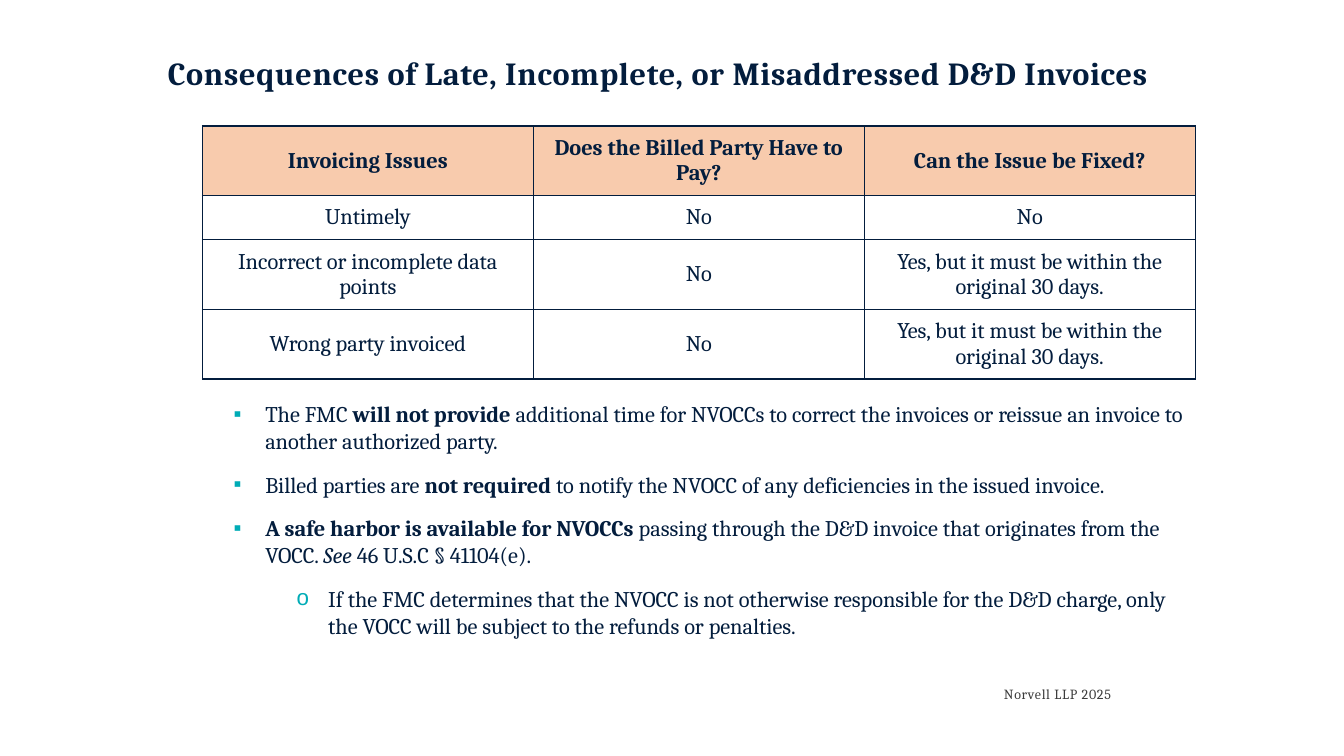
from dataclasses import dataclass

from lxml import etree
from pptx import Presentation
from pptx.dml.color import RGBColor
from pptx.enum.text import MSO_ANCHOR, MSO_AUTO_SIZE, PP_ALIGN
from pptx.oxml.ns import qn
from pptx.util import Pt

LEFT, CENTER = PP_ALIGN.LEFT, PP_ALIGN.CENTER
TOP, MIDDLE = MSO_ANCHOR.TOP, MSO_ANCHOR.MIDDLE
NO_FIT = MSO_AUTO_SIZE.NONE

FONT = "Cambria"
BULLET_FONT = "Arial"
COLORS = {"navy": "031D3D", "gray": "3C3C3C", "peach": "F8CBAD", "teal": "00ACB6"}
TITLE_ONLY = 5
INDENT = 22.5

FRAME_FORMAT = {
    "word_wrap": True, "auto_size": NO_FIT,
    "margin_left": 0, "margin_top": 0, "margin_right": 0, "margin_bottom": 0,
}


@dataclass
class Span:
    text: str
    bold: bool = False
    italic: bool = False


@dataclass
class Bullet:
    spans: list[Span]
    mark: str = "▪"
    level: int = 0
    indent: float = INDENT


TITLE = "Consequences of Late, Incomplete, or Misaddressed D&D Invoices"
FOOTER = "Norvell LLP 2025"
FIXABLE = "Yes, but it must be within the original 30 days."
ISSUE_ROWS = [
    ["Invoicing Issues", "Does the Billed Party Have to Pay?", "Can the Issue be Fixed?"],
    ["Untimely", "No", "No"],
    ["Incorrect or incomplete data points", "No", FIXABLE],
    ["Wrong party invoiced", "No", FIXABLE],
]
COLUMN_WIDTH = 236.4
ROW_HEIGHTS = [49.7, 31.6, 49.7, 49.7]

BULLETS = [
    Bullet([
        Span("The FMC "),
        Span("will not provide", bold=True),
        Span(" additional time for NVOCCs to correct the invoices or reissue "
             "an invoice to another authorized party."),
    ]),
    Bullet([
        Span("Billed parties are "),
        Span("not required", bold=True),
        Span(" to notify the NVOCC of any deficiencies in the issued invoice."),
    ]),
    Bullet([
        Span("A safe harbor is available for NVOCCs", bold=True),
        Span(" passing through the D&D invoice that originates from the VOCC. "),
        Span("See", italic=True),
        Span(" 46 U.S.C § 41104(e)."),
    ]),
    Bullet([
        Span("If the FMC determines that the NVOCC is not otherwise responsible for "
             "the D&D charge, only the VOCC will be subject to the refunds or penalties."),
    ], mark="o", level=2, indent=3 * INDENT),
]


def apply(target, values: dict) -> None:
    for name, value in values.items():
        setattr(target, name, value)


def add_span(para, span: Span, size: float = 16, color: str = "navy",
             spacing: float = 0) -> None:
    run = para.add_run()
    run.text = span.text
    apply(run.font, {"name": FONT, "size": Pt(size),
                     "bold": span.bold, "italic": span.italic})
    run.font.color.rgb = RGBColor.from_string(COLORS[color])
    if spacing:
        run.font._element.set("spc", str(round(spacing * 100)))


def place(shape, left: float, top: float, width: float, height: float) -> None:
    apply(shape, {"left": Pt(left), "top": Pt(top),
                  "width": Pt(width), "height": Pt(height)})


def add_box(page, left: float, top: float, width: float, height: float):
    box = page.shapes.add_textbox(Pt(left), Pt(top), Pt(width), Pt(height))
    apply(box.text_frame, FRAME_FORMAT | {"vertical_anchor": TOP})
    return box


def add_color(parent, color: str) -> None:
    etree.SubElement(parent, qn("a:srgbClr"), val=COLORS[color])


def set_borders(cell, color: str, width: float) -> None:
    properties = cell._tc.get_or_add_tcPr()
    for position, side in enumerate(("a:lnL", "a:lnR", "a:lnT", "a:lnB")):
        line = etree.Element(qn(side), w=str(Pt(width)))
        add_color(etree.SubElement(line, qn("a:solidFill")), color)
        properties.insert(position, line)


def add_bullet(para, bullet: Bullet, first: bool) -> None:
    properties = para._p.get_or_add_pPr()
    properties.set("marL", str(Pt(bullet.indent)))
    properties.set("indent", str(Pt(-INDENT)))
    add_color(etree.SubElement(properties, qn("a:buClr")), "teal")
    etree.SubElement(properties, qn("a:buFont"), typeface=BULLET_FONT)
    etree.SubElement(properties, qn("a:buChar"), char=bullet.mark)
    apply(para, {"level": bullet.level, "alignment": LEFT,
                 "space_before": Pt(0 if first else 6), "space_after": Pt(6)})
    for span in bullet.spans:
        add_span(para, span)


def add_title(page) -> None:
    title = page.shapes.title
    place(title, 120, 23, 813.6, 61.2)
    apply(title.text_frame, FRAME_FORMAT | {"vertical_anchor": MIDDLE})
    para = title.text_frame.paragraphs[0]
    apply(para, {"alignment": LEFT, "line_spacing": 0.9})
    add_span(para, Span(TITLE, bold=True), size=23, spacing=0.5)


def add_issue_table(page) -> None:
    columns = len(ISSUE_ROWS[0])
    table = page.shapes.add_table(
        len(ISSUE_ROWS), columns, Pt(144.6), Pt(90),
        Pt(columns * COLUMN_WIDTH), Pt(sum(ROW_HEIGHTS))).table
    table.horz_banding = False
    for column in table.columns:
        column.width = Pt(COLUMN_WIDTH)
    for row_index, (labels, height) in enumerate(zip(ISSUE_ROWS, ROW_HEIGHTS)):
        header = row_index == 0
        table.rows[row_index].height = Pt(height)
        for cell, label in zip(table.rows[row_index].cells, labels):
            cell.vertical_anchor = MIDDLE
            if header:
                cell.fill.solid()
                cell.fill.fore_color.rgb = RGBColor.from_string(COLORS["peach"])
            else:
                cell.fill.background()
            set_borders(cell, "navy", 1)
            para = cell.text_frame.paragraphs[0]
            para.alignment = CENTER
            add_span(para, Span(label, bold=header))


def add_bullet_list(page) -> None:
    frame = add_box(page, 167, 285.8, 687, 188).text_frame
    for index, bullet in enumerate(BULLETS):
        para = frame.add_paragraph() if index else frame.paragraphs[0]
        add_bullet(para, bullet, first=index == 0)


def add_footer(page) -> None:
    box = add_box(page, 717.1, 489.6, 202.3, 23.8)
    add_span(box.text_frame.paragraphs[0], Span(FOOTER),
             size=10, color="gray", spacing=0.5)


def main() -> None:
    deck = Presentation()
    apply(deck, {"slide_width": Pt(960), "slide_height": Pt(540)})
    page = deck.slides.add_slide(deck.slide_layouts[TITLE_ONLY])
    add_title(page)
    add_footer(page)
    add_issue_table(page)
    add_bullet_list(page)
    deck.save("out.pptx")


if __name__ == "__main__":
    main()
